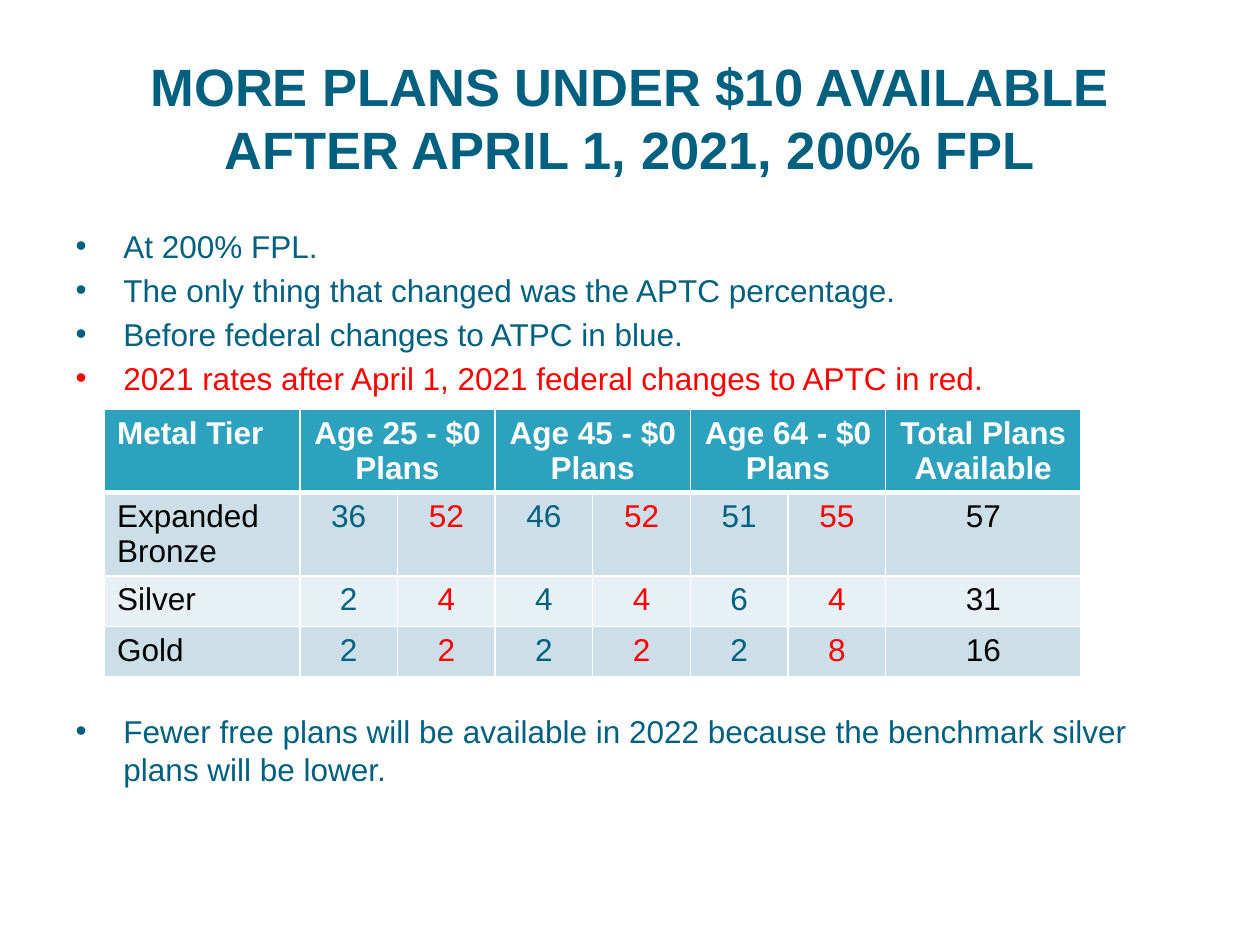
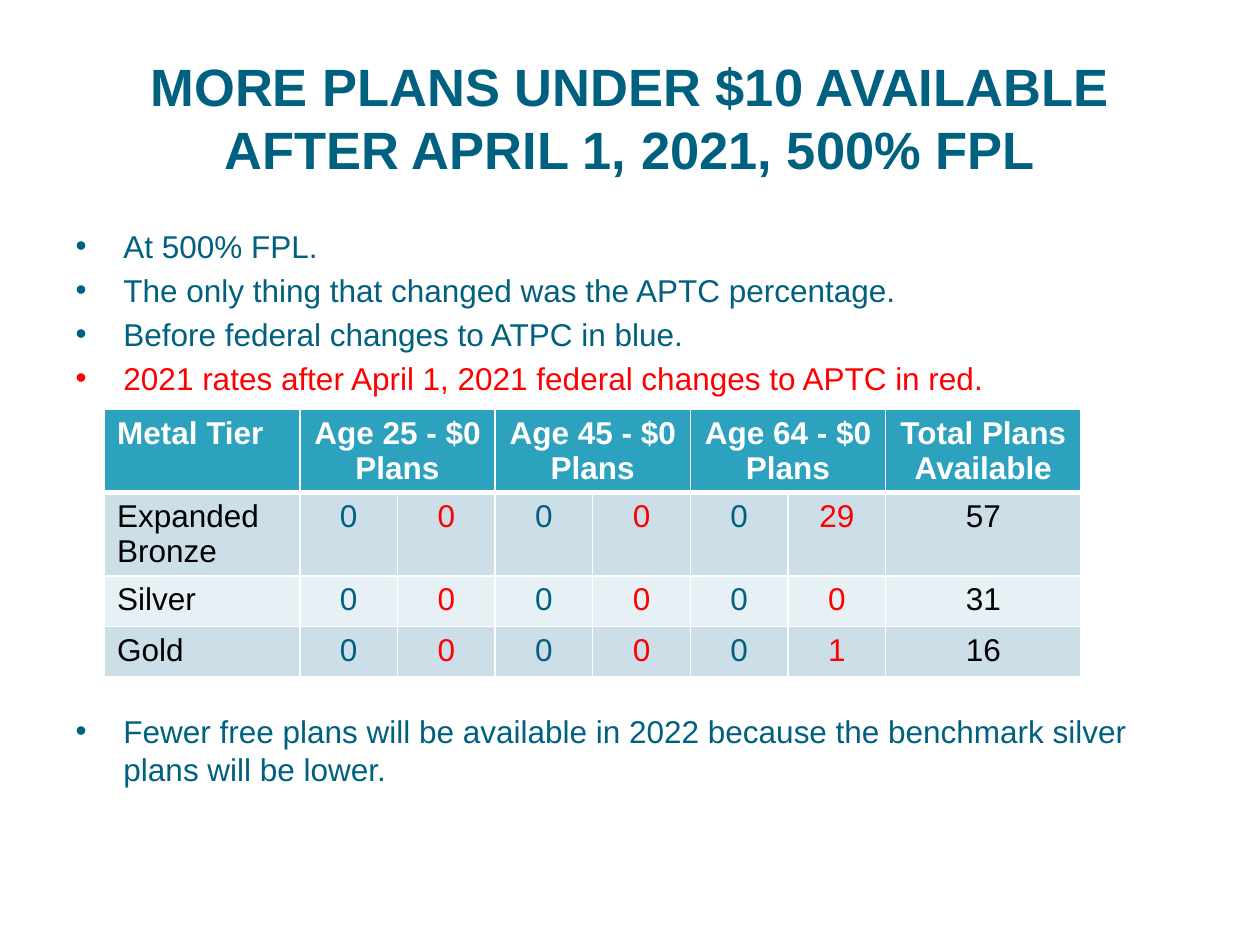
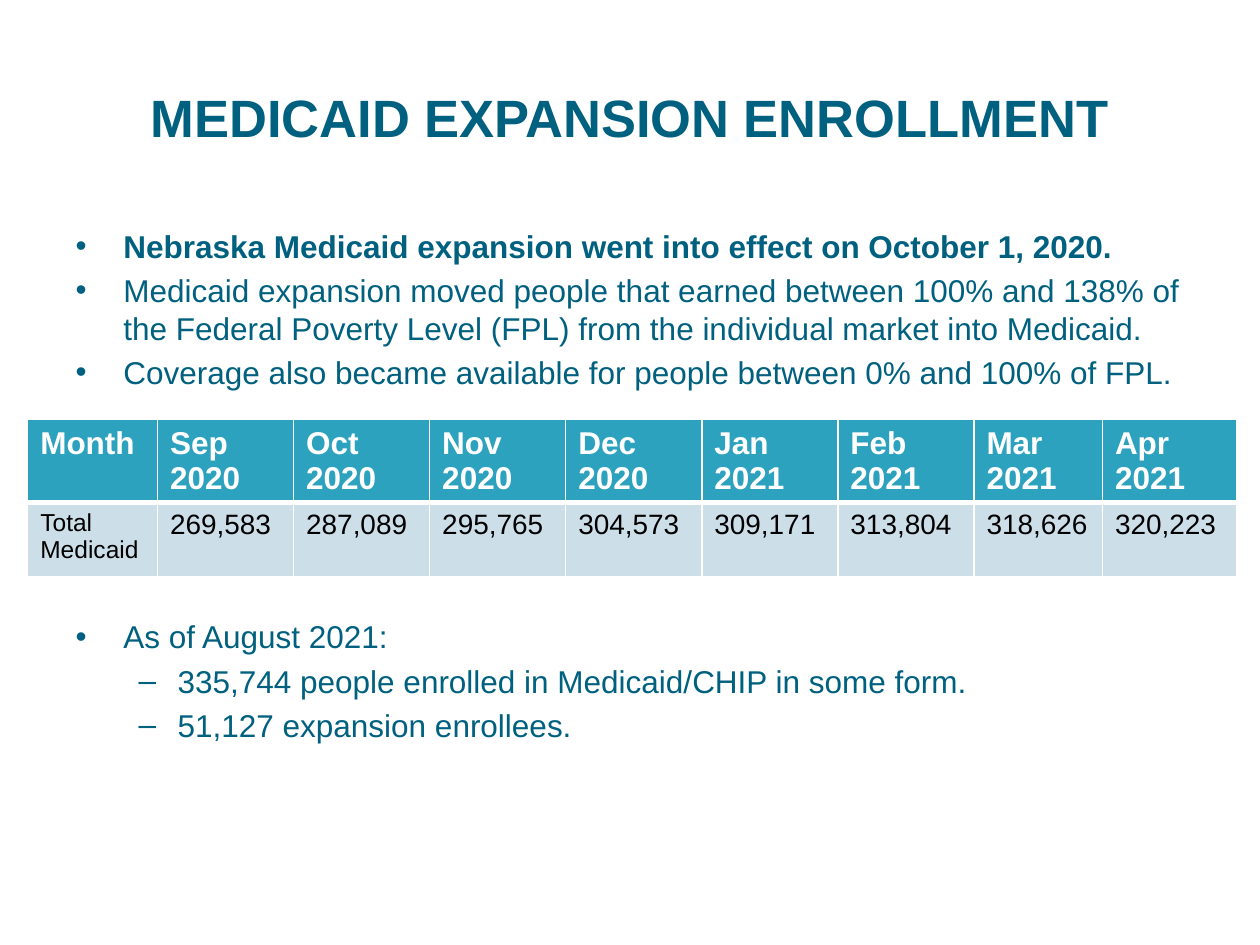
"""Build three slides on plan prices and Medicaid enrollment."""
from lxml.etree import SubElement
from pptx import Presentation
from pptx.dml.color import RGBColor
from pptx.enum.text import MSO_ANCHOR, MSO_AUTO_SIZE, PP_ALIGN
from pptx.oxml.ns import qn
from pptx.util import Inches, Pt

HUES = {"blue": "00607F", "red": "FF0000", "head": "2DA2BF", "dark": "CCDFE8",
        "light": "E7F0F4", "white": "FFFFFF", "black": "000000"}
FONT = "Arial"
LEAD = 1.2
SIZE = 18
GAP = 3.6
PITCH = SIZE * LEAD + GAP
MARKS = [("•", 0.38, -0.38), ("–", 0.81, -0.31)]


def style(para, size, hue, bold=False):
    for run in para.runs:
        font = run.font
        font.name, font.size, font.bold = FONT, Pt(size), bold
        font.color.rgb = RGBColor.from_string(HUES[hue])


def edge(cell, side, width):
    line = SubElement(cell._tc.get_or_add_tcPr(), qn(f"a:ln{side}"), w=str(Pt(width)))
    fill = SubElement(line, qn("a:solidFill"))
    SubElement(fill, qn("a:srgbClr"), val=HUES["white"])


deck = []
plans = [
    ("200%", [[36, 52, 46, 52, 51, 55], [2, 4, 4, 4, 6, 4], [2, 2, 2, 2, 2, 8]]),
    ("500%", [[0, 0, 0, 0, 0, 29], [0] * 6, [0, 0, 0, 0, 0, 1]]),
]
tiers = [("Expanded Bronze", 57), ("Silver", 31), ("Gold", 16)]
for level, counts in plans:
    head = ["Metal Tier"]
    for age in (25, 45, 64):
        head += [f"Age {age} - $0 Plans", ""]
    head.append("Total Plans Available")
    deck.append({
        "title": f"MORE PLANS UNDER $10 AVAILABLE AFTER APRIL 1, 2021, {level} FPL",
        "list": [
            (f"At {level} FPL.", 0, "blue", False, 0),
            ("The only thing that changed was the APTC percentage.", 0, "blue", False, 0),
            ("Before federal changes to ATPC in blue.", 0, "blue", False, 0),
            ("2021 rates after April 1, 2021 federal changes to APTC in red.", 0, "red", False, 0),
            ("Fewer free plans will be available in 2022 because the benchmark silver "
             "plans will be lower.", 0, "blue", False, 7),
        ],
        "rows": [head] + [[name, *row, total] for (name, total), row in zip(tiers, counts)],
        "at": (0.83, 3.25),
        "wide": [1.55] + [1.55 / 2] * 6 + [1.55],
        "high": [0.65, 0.65, 0.4, 0.4],
        "spans": [1, 3, 5],
        "sizes": (18, 18),
        "hues": ["black"] + ["blue", "red"] * 3 + ["black"],
        "align": PP_ALIGN.CENTER,
    })

months = ["Sep 2020", "Oct 2020", "Nov 2020", "Dec 2020",
          "Jan 2021", "Feb 2021", "Mar 2021", "Apr 2021"]
people = [269583, 287089, 295765, 304573, 309171, 313804, 318626, 320223]
deck.append({
    "title": "MEDICAID EXPANSION ENROLLMENT",
    "list": [
        ("Nebraska Medicaid expansion went into effect on October 1, 2020.", 0, "blue", True, 0),
        ("Medicaid expansion moved people that earned between 100% and 138% of the Federal "
         "Poverty Level (FPL) from the individual market into Medicaid.", 0, "blue", False, 0),
        ("Coverage also became available for people between 0% and 100% of FPL.",
         0, "blue", False, 0),
        ("As of August 2021:", 0, "blue", False, 5),
        ("335,744 people enrolled in Medicaid/CHIP in some form.", 1, "blue", False, 0),
        ("51,127 expansion enrollees.", 1, "blue", False, 0),
    ],
    "rows": [["Month", *months], ["Total Medicaid", *[f"{num:,}" for num in people]]],
    "at": (0.22, 3.33),
    "wide": [1.03] + [1.08] * 6 + [1.02, 1.07],
    "high": [0.66, 0.59],
    "spans": [],
    "sizes": (14, 16),
    "hues": ["black"] * 9,
    "align": PP_ALIGN.LEFT,
})

prs = Presentation()
prs.slide_width, prs.slide_height = Inches(10), Inches(7.5)

for page in deck:
    slide = prs.slides.add_slide(prs.slide_layouts[1])
    title, body = slide.shapes.title, slide.placeholders[1]
    for box, top, high in ((title, 0.3, 1.25), (body, 1.75, 4.95)):
        box.left, box.top = Inches(0.5), Inches(top)
        box.width, box.height = Inches(9), Inches(high)
        box.text_frame.auto_size = MSO_AUTO_SIZE.NONE
        box.text_frame.word_wrap = True

    title.text_frame.text = page["title"]
    title.text_frame.vertical_anchor = MSO_ANCHOR.MIDDLE
    para = title.text_frame.paragraphs[0]
    para.alignment = PP_ALIGN.CENTER
    para.line_spacing = Pt(30 * LEAD)
    style(para, 30, "blue", True)

    frame = body.text_frame
    frame.text = "\n".join(item[0] for item in page["list"])
    for num, (para, item) in enumerate(zip(frame.paragraphs, page["list"])):
        text, level, hue, bold, skip = item
        mark, left, dent = MARKS[level]
        para.level = level
        props = para._p.get_or_add_pPr()
        props.set("marL", str(Inches(left)))
        props.set("indent", str(Inches(dent)))
        tint = SubElement(props, qn("a:buClr"))
        SubElement(tint, qn("a:srgbClr"), val=HUES[hue])
        SubElement(props, qn("a:buFont"), typeface=FONT)
        SubElement(props, qn("a:buChar"), char=mark)
        para.line_spacing = Pt(SIZE * LEAD)
        para.space_before = Pt(GAP + skip * PITCH if num else 0)
        style(para, SIZE, hue, bold)

    rows, wide, high = page["rows"], page["wide"], page["high"]
    left, top = page["at"]
    table = slide.shapes.add_table(len(rows), len(wide), Inches(left), Inches(top),
                                   Inches(sum(wide)), Inches(sum(high))).table
    for col, width in zip(table.columns, wide):
        col.width = Inches(width)
    for row, height in zip(table.rows, high):
        row.height = Inches(height)
    for col in page["spans"]:
        table.cell(0, col).merge(table.cell(0, col + 1))
    for r, row in enumerate(rows):
        for c, value in enumerate(row):
            cell = table.cell(r, c)
            for side in "LRTB":
                edge(cell, side, 3 if (r, side) in ((0, "B"), (1, "T")) else 1)
            cell.fill.solid()
            band = "head" if r == 0 else "dark" if r % 2 else "light"
            cell.fill.fore_color.rgb = RGBColor.from_string(HUES[band])
            if value == "":
                continue
            cell.text_frame.text = str(value)
            para = cell.text_frame.paragraphs[0]
            para.alignment = page["align"] if c else PP_ALIGN.LEFT
            if r == 0:
                style(para, SIZE, "white", True)
            else:
                style(para, page["sizes"][c > 0], page["hues"][c])

prs.save("out.pptx")
